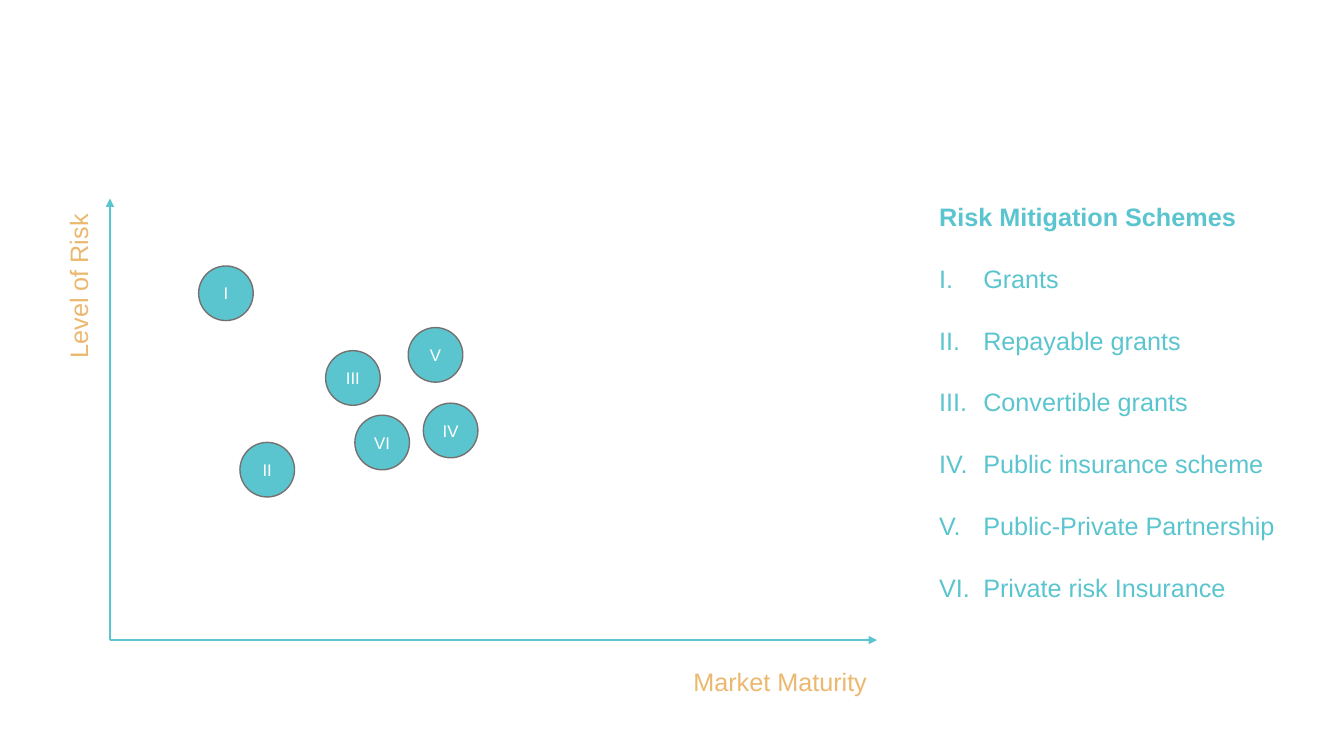
from dataclasses import dataclass

from lxml import etree
from pptx import Presentation
from pptx.dml.color import RGBColor
from pptx.enum import shapes, text
from pptx.oxml import ns
from pptx.util import Pt


@dataclass(frozen=True)
class Theme:
    """Colours, font and type sizes of the slide."""
    teal: RGBColor = RGBColor.from_string("5BC5CF")
    gold: RGBColor = RGBColor.from_string("EBB86E")
    grey: RGBColor = RGBColor.from_string("767171")
    white: RGBColor = RGBColor.from_string("FFFFFF")
    font: str = "Arial"
    body: int = 18
    marker: int = 12


@dataclass(frozen=True)
class Box:
    """A region in points."""
    left: float
    top: float
    width: float
    height: float

    @property
    def right(self):
        """Return the right edge."""
        return self.left + self.width

    @property
    def bottom(self):
        """Return the bottom edge."""
        return self.top + self.height

    def lengths(self):
        """Return the four measures as slide lengths."""
        return [Pt(v) for v in (self.left, self.top, self.width, self.height)]


THEME = Theme()
SCHEMES = ["Grants", "Repayable grants", "Convertible grants",
           "Public insurance scheme", "Public-Private Partnership",
           "Private risk Insurance"]
MARKERS = {"I": (63.4, 48.2), "II": (92.9, 174.2), "III": (154.1, 108.7),
           "IV": (223.9, 146.2), "V": (213.1, 92.2), "VI": (175, 154.8)}
DIAMETER = 39


def style(paragraph, size, colour, bold=False):
    """Set the font of a paragraph."""
    font = paragraph.font
    font.name, font.size, font.bold = THEME.font, Pt(size), bold
    font.color.rgb = colour


def add_axis(slide, start, end):
    """Draw an axis with an arrowhead at its end."""
    axis = slide.shapes.add_connector(
        shapes.MSO_CONNECTOR.STRAIGHT, *map(Pt, start + end))
    axis.line.color.rgb = THEME.teal
    axis.line.width = Pt(1.5)
    etree.SubElement(axis.line._get_or_add_ln(), ns.qn("a:tailEnd"), type="triangle")
    etree.SubElement(axis._element.spPr, ns.qn("a:effectLst"))


def add_axis_title(slide, box, title, rotation=0):
    """Write an axis title in its box."""
    label = slide.shapes.add_textbox(*box.lengths())
    label.rotation = rotation
    label.text_frame.word_wrap = True
    paragraph = label.text_frame.paragraphs[0]
    paragraph.text = title
    style(paragraph, THEME.body, THEME.gold)


def add_marker(slide, box, numeral):
    """Draw a numbered circle."""
    marker = slide.shapes.add_shape(shapes.MSO_SHAPE.OVAL, *box.lengths())
    marker.shadow.inherit = False
    marker.fill.solid()
    marker.fill.fore_color.rgb = THEME.teal
    marker.line.color.rgb = THEME.grey
    marker.line.width = Pt(1)
    frame = marker.text_frame
    frame.margin_left = frame.margin_right = 0
    frame.vertical_anchor = text.MSO_ANCHOR.MIDDLE
    paragraph = frame.paragraphs[0]
    paragraph.text = numeral
    paragraph.alignment = text.PP_ALIGN.CENTER
    style(paragraph, THEME.marker, THEME.white)


def add_risk_map(slide, box):
    """Draw the axes, their titles and the scheme markers."""
    origin = (box.left, box.bottom)
    add_axis(slide, origin, (box.left, box.top))
    add_axis(slide, origin, (box.right, box.bottom))
    for numeral, (across, down) in MARKERS.items():
        add_marker(slide, Box(box.left + across, box.top + down,
                              DIAMETER, DIAMETER), numeral)
    add_axis_title(slide, Box(box.right - 138.2, box.bottom + 15.1, 148.3, 28.8),
                   "Market Maturity")
    add_axis_title(slide, Box(box.left - 95.8, box.top + 33.8, 146.2, 28.8),
                   "Level of Risk", 270)


def add_scheme_list(slide, box):
    """Write the heading and the numbered schemes."""
    frame = slide.shapes.add_textbox(*box.lengths()).text_frame
    frame.word_wrap = True
    heading = frame.paragraphs[0]
    heading.text = "Risk Mitigation Schemes"
    style(heading, THEME.body, THEME.teal, bold=True)
    indent = Pt(31.5)
    for scheme in SCHEMES:
        item = frame.add_paragraph()
        item.text = scheme
        item.space_before = Pt(22.5)
        properties = item._p.get_or_add_pPr()
        properties.set("marL", str(indent))
        properties.set("indent", str(-indent))
        etree.SubElement(properties, ns.qn("a:buFont"), typeface="+mj-lt")
        etree.SubElement(properties, ns.qn("a:buAutoNum"), type="romanUcPeriod")
        style(item, THEME.body, THEME.teal)


def main():
    """Build and save the slide."""
    deck = Presentation()
    deck.slide_width, deck.slide_height = Pt(960), Pt(540)
    slide = deck.slides.add_slide(deck.slide_layouts[6])
    add_scheme_list(slide, Box(663.8, 140.4, 260, 312.5))
    add_risk_map(slide, Box(78.5, 141.8, 547.9, 315.4))
    deck.save("out.pptx")


if __name__ == "__main__":
    main()
